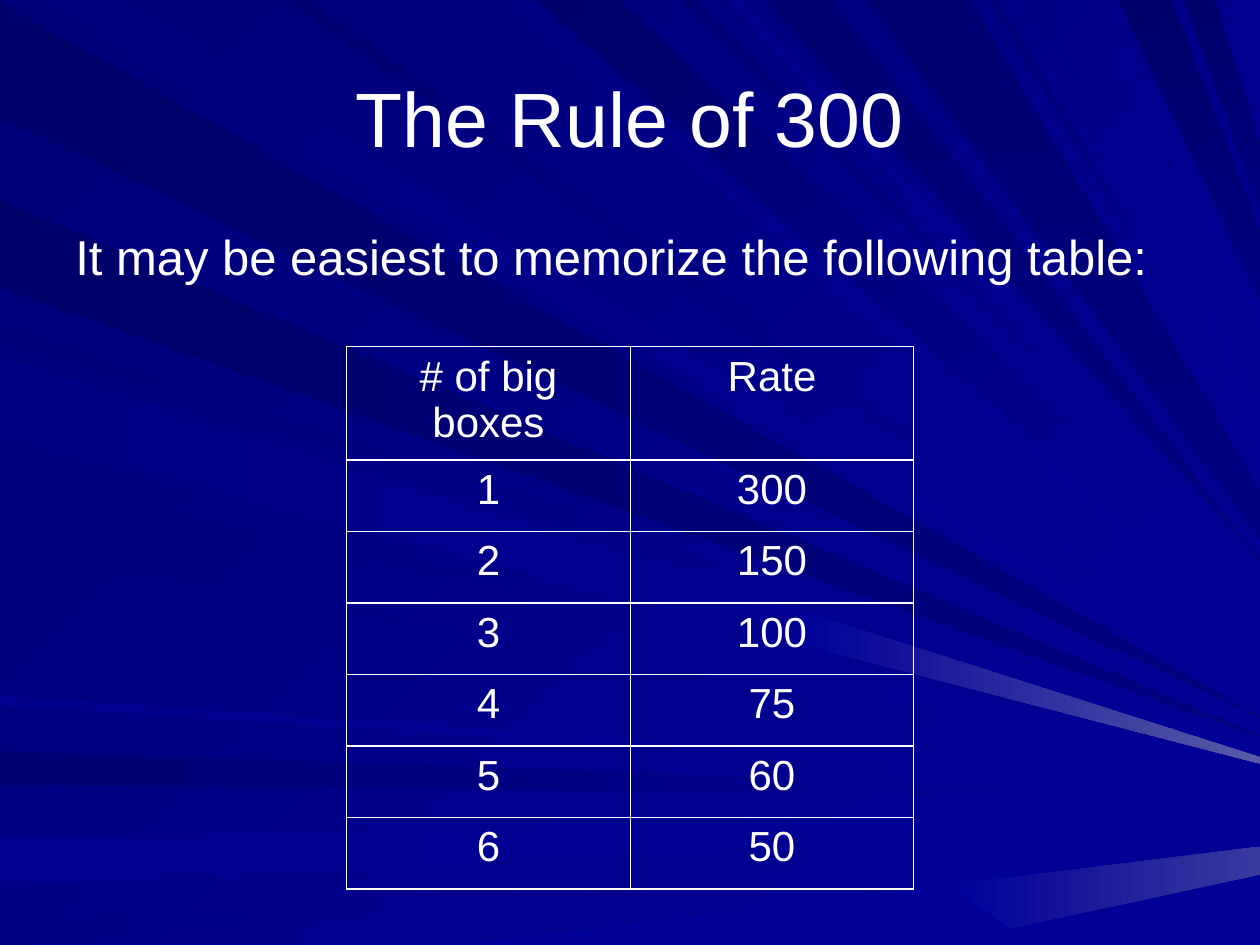
"""Build the Rule of 300 slide: a heart-rate table over a fan of blue rays."""
from lxml.etree import SubElement
from pptx import Presentation
from pptx.dml.color import RGBColor
from pptx.enum.text import MSO_ANCHOR as Anchor, PP_ALIGN as Align
from pptx.oxml.ns import qn
from pptx.util import Cm, Pt

COLOURS = {
    "white": "FFFFFF", "glow": "39399E", "haze": "5A5AA6",
    "ink": "00006B", "night": "000072", "navy": "000078", "deep": "00007D",
    "dusk": "000080", "royal": "000085", "cobalt": "00008D", "bright": "000099",
}
RAY_UNIT = Cm(0.0254)
RIGHT, BOTTOM = 1000, 750
FANS = [
    ("left", 0, [
        (2, 93, 569, 1, "ink", "dusk"),
        (596, 623, 631, 1, "night", "bright"),
        (665, 704, 643, 8, "cobalt", "bright"),
        (735, 765, 662, 1, "royal", "bright"),
        (159, 228, 584, 1, "ink", "dusk"),
        (552, 560, 621, 2, "cobalt", "bright"),
    ]),
    ("left", 45, [
        (258, 270, 588, 1, "navy", "bright"),
        (278, 342, 596, 6, "deep", "bright"),
        (374, 437, 605, 1, "deep", "bright"),
    ]),
    ("top", 45, [
        (26, 101, 562, 1, "deep", "bright"),
        (398, 416, 515, 6, "royal", "bright"),
        (426, 492, 479, 28, "ink", "bright"),
        (540, 552, 462, 1, "night", "bright"),
        (225, 247, 547, 5, "night", "bright"),
        (577, 588, 453, 1, "cobalt", "bright"),
        (785, 792, 354, 6, "navy", "bright"),
        (815, 824, 335, 1, "royal", "bright"),
        (865, 872, 249, 9, "cobalt", "bright"),
    ]),
    ("top", 90, [
        (606, 661, 445, 1, "night", "dusk"),
        (887, 930, 183, 54, "ink", "dusk"),
        (939, 964, 114, 53, "ink", "dusk"),
        (686, 770, 390, 38, "night", "dusk"),
    ]),
    ("left", 0, [(283, 347, 601, 5, "royal", "bright")]),
]


def paint(fill, start, end, angle):
    fill.gradient()
    fill.gradient_angle = (360 - angle) % 360
    for stop, name in zip(fill.gradient_stops, (start, end)):
        stop.color.rgb = RGBColor.from_string(COLOURS[name])


def write(frame, text, size, align=Align.LEFT, anchor=Anchor.TOP):
    frame.word_wrap = True
    frame.vertical_anchor = anchor
    line = frame.paragraphs[0]
    line.alignment = align
    run = line.add_run()
    run.text = text
    run.font.name = "Arial"
    run.font.size = Pt(size)
    run.font.bold = False
    run.font.color.rgb = RGBColor.from_string(COLOURS["white"])


deck = Presentation()
deck.slide_width, deck.slide_height = Cm(25.4), Cm(19.05)
slide = deck.slides.add_slide(deck.slide_layouts[6])
paint(slide.background.fill, "navy", "bright", 45)

rays = [
    ([(364, BOTTOM), (742, BOTTOM), (801, 737), (756, 702)], "bright", "bright", 0),
    ([(756, 702), (RIGHT, 672), (RIGHT, 694), (801, 737)], "bright", "glow", 0),
]
for edge, angle, fan in FANS:
    for near, far, tip, spread, start, end in fan:
        if edge == "left":
            corners = [(0, far), (0, near), (RIGHT, tip), (RIGHT, tip + spread)]
        else:
            corners = [(near, 0), (far, 0), (RIGHT, tip), (RIGHT, tip + spread)]
        rays.append(([(x, min(y, BOTTOM)) for x, y in corners], start, end, angle))
rays.append(([(637, 485), (RIGHT, 601), (RIGHT, 606), (633, 511)], "bright", "haze", 0))

for corners, start, end, angle in rays:
    outline = slide.shapes.build_freeform(*corners[0], scale=RAY_UNIT)
    outline.add_line_segments(corners[1:], close=True)
    ray = outline.convert_to_shape()
    ray.shadow.inherit = False
    ray.line.fill.background()
    paint(ray.fill, start, end, angle)

title = slide.shapes.add_textbox(Cm(1.27), Cm(0.76), Cm(22.86), Cm(3.18))
write(title.text_frame, "The Rule of 300", size=44, align=Align.CENTER, anchor=Anchor.MIDDLE)

intro = slide.shapes.add_textbox(Cm(1.27), Cm(4.45), Cm(22.86), Cm(2.11))
write(intro.text_frame, "It may be easiest to memorize the following table:", size=28)

rows = [("# of big boxes", "Rate")]
rows += [(str(boxes), str(300 // boxes)) for boxes in range(1, 7)]
rates = slide.shapes.add_table(len(rows), 2, Cm(6.99), Cm(6.99), Cm(11.43), Cm(10.8)).table
rates.first_row = rates.horz_banding = False
for row, values in enumerate(rows):
    rates.rows[row].height = Cm(1.44 if row else 2.16)
    for column, value in enumerate(values):
        cell = rates.cell(row, column)
        write(cell.text_frame, value, size=24, align=Align.CENTER)
        properties = cell._tc.get_or_add_tcPr()
        for side in ("a:lnL", "a:lnR", "a:lnT", "a:lnB"):
            border = SubElement(properties, qn(side), w=str(Pt(1)))
            stroke = SubElement(border, qn("a:solidFill"))
            SubElement(stroke, qn("a:srgbClr"), val=COLOURS["white"])
        cell.fill.background()

deck.save("out.pptx")
